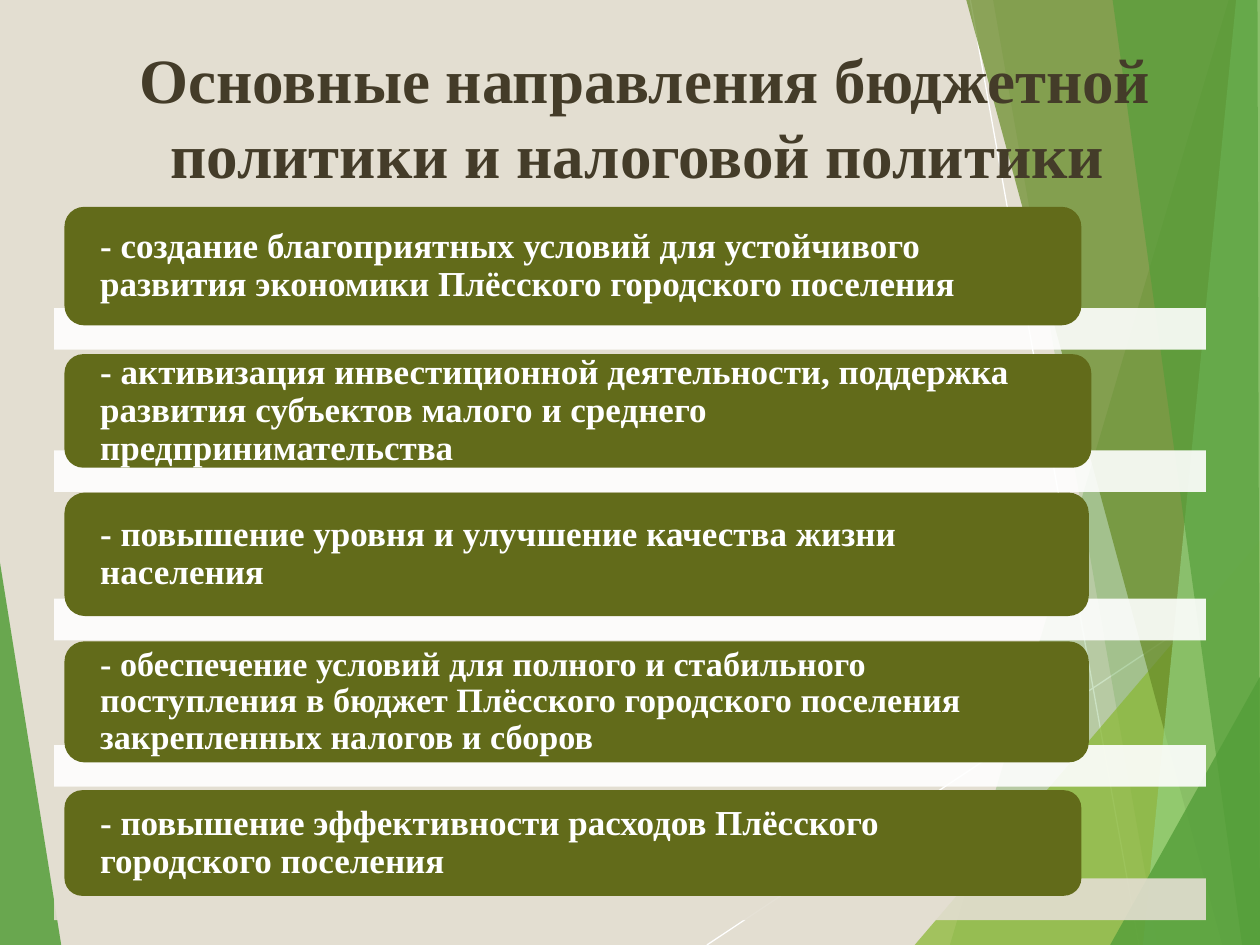
from typing import NamedTuple

from lxml import etree
from pptx import Presentation
from pptx.dml.color import RGBColor
from pptx.enum import shapes, text
from pptx.oxml.ns import qn
from pptx.util import Cm, Pt

FONT = "Times New Roman"
SAND = RGBColor(0xE3, 0xDE, 0xD1)
WHITE = RGBColor(0xFF, 0xFF, 0xFF)
BROWN = RGBColor(0x44, 0x3C, 0x29)
OLIVE = RGBColor(0x62, 0x6B, 0x1A)
GREEN = RGBColor(0x54, 0x9E, 0x39)
LIME = RGBColor(0x8A, 0xB8, 0x33)
MOSS = RGBColor(0x67, 0x8A, 0x26)
MINT = RGBColor(0x93, 0xD0, 0x7D)

WIDTH, HEIGHT = 25.4, 19.05
EDGE = 25.43
CARD_LEFT = 1.3
CARD_INSET = 0.12
STRIP_LEFT, STRIP_WIDTH, STRIP_HEIGHT = 1.09, 23.22, 0.84
STRIP_OVERLAP = 0.35


class Facet(NamedTuple):
    color: RGBColor
    opacity: int
    corners: list[tuple[float, float]]


class Direction(NamedTuple):
    wording: str
    top: float
    width: float
    height: float
    size: float = 20
    strip: RGBColor = WHITE


RAYS = [
    ((14.25, HEIGHT), (EDGE, 11.61)),
    ((19.56, 0), (22.96, HEIGHT)),
]

FACETS = [
    Facet(GREEN, 85, [(-0.03, 11.15), (1.24, 19.08), (-0.03, HEIGHT)]),
    Facet(GREEN, 30, [(24.77, 0), (19.15, HEIGHT), (EDGE, HEIGHT), (EDGE, 0)]),
    Facet(GREEN, 20, [(20.02, 0), (23.34, HEIGHT), (EDGE, HEIGHT), (EDGE, 0)]),
    Facet(LIME, 72, [(18.44, HEIGHT), (25.4, 10.9), (EDGE, HEIGHT)]),
    Facet(MOSS, 70, [(19.48, 0), (24.64, HEIGHT), (EDGE, HEIGHT), (EDGE, 0)]),
    Facet(MINT, 70, [(24.92, 0), (23.04, HEIGHT), (EDGE, HEIGHT), (25.4, 0)]),
    Facet(GREEN, 65, [(22.43, 0), (25.04, HEIGHT), (25.4, HEIGHT), (25.35, 0)]),
    Facet(GREEN, 80, [(22.38, HEIGHT), (EDGE, 13.59), (EDGE, HEIGHT)]),
]

DIRECTIONS = [
    Direction("- создание благоприятных условий для устойчивого развития "
              "экономики Плёсского городского поселения", 4.17, 20.5, 2.39),
    Direction("- активизация инвестиционной деятельности, поддержка развития "
              "субъектов малого и среднего предпринимательства", 7.14, 20.7, 2.29),
    Direction("- повышение уровня и улучшение качества жизни населения",
              9.93, 20.65, 2.49),
    Direction("- обеспечение условий для полного и стабильного поступления в бюджет "
              "Плёсского городского поселения закрепленных налогов и сборов",
              12.93, 20.65, 2.44, size=19.5),
    Direction("- повышение эффективности расходов Плёсского городского поселения",
              15.93, 20.5, 2.13, strip=SAND),
]


def paint(shape, color: RGBColor, opacity: int = 100) -> None:
    """Give a flat fill without outline or shadow."""
    shape.shadow.inherit = False
    shape.line.fill.background()
    shape.fill.solid()
    shape.fill.fore_color.rgb = color
    if opacity < 100:
        tone = shape.fill._xPr.find(qn("a:solidFill"))[0]
        etree.SubElement(tone, qn("a:alpha"), val=str(opacity * 1000))


def draw_ray(slide, start: tuple[float, float], end: tuple[float, float]) -> None:
    ray = slide.shapes.add_connector(
        shapes.MSO_CONNECTOR.STRAIGHT, *map(Cm, start + end))
    ray.line.color.rgb = WHITE
    ray.line.width = Pt(0.75)
    etree.SubElement(ray._element.spPr, qn("a:effectLst"))


def draw_facet(slide, facet: Facet) -> None:
    first, *others = [(Cm(x), Cm(y)) for x, y in facet.corners]
    outline = slide.shapes.build_freeform(*first)
    outline.add_line_segments(others, close=True)
    paint(outline.convert_to_shape(), facet.color, facet.opacity)


def add_words(slide, wording: str, box: tuple[float, float, float, float],
              size: float, color: RGBColor):
    """Add a wrapped, vertically centred text box; return its frame."""
    frame = slide.shapes.add_textbox(*map(Cm, box)).text_frame
    frame.word_wrap = True
    frame.vertical_anchor = text.MSO_ANCHOR.MIDDLE
    run = frame.paragraphs[0].add_run()
    run.text = wording
    run.font.name = FONT
    run.font.size = Pt(size)
    run.font.bold = True
    run.font.color.rgb = color
    return frame


def draw_direction(slide, item: Direction) -> None:
    """Draw a strip, the card that overlaps it and the card's wording."""
    strip_top = item.top + item.height - STRIP_OVERLAP
    strip = slide.shapes.add_shape(
        shapes.MSO_SHAPE.RECTANGLE,
        *map(Cm, (STRIP_LEFT, strip_top, STRIP_WIDTH, STRIP_HEIGHT)))
    paint(strip, item.strip, 90)

    card = slide.shapes.add_shape(
        shapes.MSO_SHAPE.ROUNDED_RECTANGLE,
        *map(Cm, (CARD_LEFT, item.top, item.width, item.height)))
    paint(card, OLIVE)

    box = (CARD_LEFT + CARD_INSET, item.top + CARD_INSET,
           item.width - 2 * CARD_INSET, item.height - 2 * CARD_INSET)
    frame = add_words(slide, item.wording, box, item.size, WHITE)
    frame.margin_left = frame.margin_right = Cm(0.6)
    frame.margin_top = frame.margin_bottom = 0
    frame.paragraphs[0].line_spacing = 0.9


def main() -> None:
    deck = Presentation()
    deck.slide_width, deck.slide_height = Cm(WIDTH), Cm(HEIGHT)
    slide = deck.slides.add_slide(deck.slide_layouts[6])
    slide.background.fill.solid()
    slide.background.fill.fore_color.rgb = SAND

    for start, end in RAYS:
        draw_ray(slide, start, end)
    for facet in FACETS:
        draw_facet(slide, facet)

    title = add_words(
        slide, "Основные направления бюджетной политики и налоговой политики ",
        (1.7, 0.53, 22.61, 3.61), 36, BROWN)
    title.paragraphs[0].alignment = text.PP_ALIGN.CENTER

    for item in DIRECTIONS:
        draw_direction(slide, item)
    deck.save("out.pptx")


if __name__ == "__main__":
    main()
